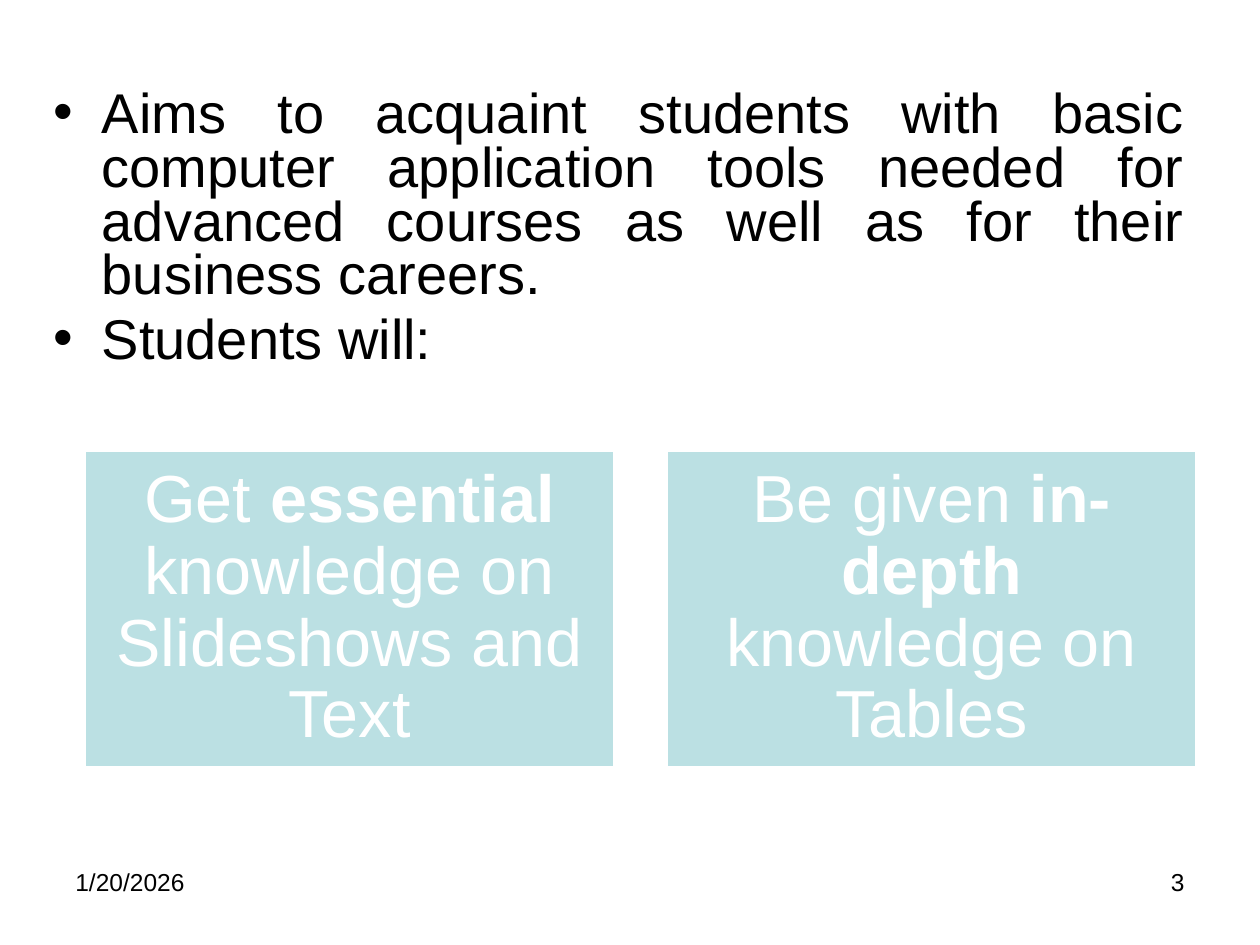
"""Build the course aims slide with two learning outcome boxes."""
from lxml.etree import SubElement
from pptx import Presentation
from pptx.dml.color import RGBColor
from pptx.enum.shapes import MSO_SHAPE as SHAPE
from pptx.enum.text import MSO_ANCHOR as ANCHOR, PP_ALIGN as ALIGN
from pptx.oxml.ns import qn
from pptx.util import Inches, Pt

COLORS = {"text": "000000", "box": "BBE0E3", "white": "FFFFFF"}
AIMS = [
    "Aims to acquaint students with basic computer application tools needed "
    "for advanced courses as well as for their business careers.",
    "Students will:",
]
OUTCOMES = [
    [("Get ", False), ("essential", True), (" knowledge on Slideshows and Text", False)],
    [("Be given ", False), ("in-depth", True), (" knowledge on Tables", False)],
]
FOOTERS = [("1/20/2026", 0.5, ALIGN.LEFT), ("3", 7.17, ALIGN.RIGHT)]
BOX_LEFT, BOX_TOP, BOX_W, BOX_H, BOX_PITCH = 0.67, 3.57, 4.21, 2.52, 4.62


def rgb(name):
    return RGBColor.from_string(COLORS[name])


def write(sp, paragraphs, size, color="text", align=ALIGN.LEFT, spacing=1,
          before=0, bullet=False, anchor=ANCHOR.TOP, inset=None):
    tf = sp.text_frame
    tf.word_wrap = True
    tf.vertical_anchor = anchor
    if inset is not None:
        tf.margin_left = tf.margin_right = Inches(inset)
        tf.margin_top = tf.margin_bottom = Inches(inset)
    for i, runs in enumerate(paragraphs):
        p = tf.add_paragraph() if i else tf.paragraphs[0]
        p.alignment = align
        p.line_spacing = spacing
        p.space_before = Pt(before if i else 0)
        if bullet:
            pPr = p._p.get_or_add_pPr()
            pPr.set("marL", str(Inches(0.38)))
            pPr.set("indent", str(Inches(-0.38)))
            SubElement(pPr, qn("a:buFont")).set("typeface", "Arial")
            SubElement(pPr, qn("a:buChar")).set("char", "•")
        for text, bold in runs:
            r = p.add_run()
            r.text = text
            r.font.name = "Arial"
            r.font.size = Pt(size)
            r.font.bold = bold
            r.font.color.rgb = rgb(color)


def place(left, top, width, height):
    return [Inches(v) for v in (left, top, width, height)]


def main():
    prs = Presentation()
    prs.slide_width, prs.slide_height = Inches(10), Inches(7.5)
    s = prs.slides.add_slide(prs.slide_layouts[6])

    for text, left, align in FOOTERS:
        sp = s.shapes.add_textbox(*place(left, 6.83, 2.33, 0.52))
        write(sp, [[(text, False)]], 14, align=align)

    sp = s.shapes.add_textbox(*place(0.33, 0.67, 9.17, 6))
    write(sp, [[(text, False)] for text in AIMS], 32, align=ALIGN.JUSTIFY,
          spacing=0.8, before=6.4, bullet=True)

    for i, runs in enumerate(OUTCOMES):
        sp = s.shapes.add_shape(
            SHAPE.RECTANGLE, *place(BOX_LEFT + i * BOX_PITCH, BOX_TOP, BOX_W, BOX_H))
        sp.shadow.inherit = False
        sp.fill.solid()
        sp.fill.fore_color.rgb = rgb("box")
        sp.line.color.rgb = rgb("white")
        sp.line.width = Pt(2)
        write(sp, [runs], 38, color="white", align=ALIGN.CENTER, spacing=0.9,
              anchor=ANCHOR.MIDDLE, inset=0.16)

    prs.save("out.pptx")


if __name__ == "__main__":
    main()
